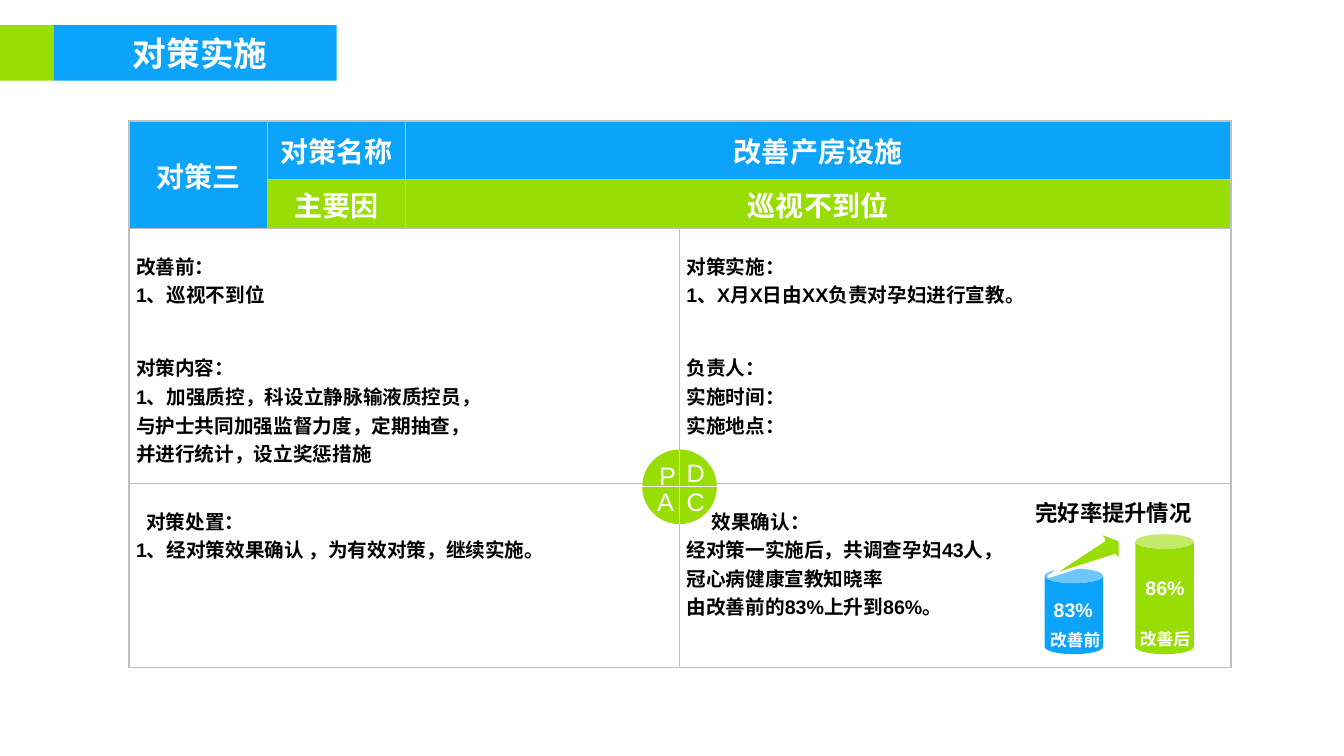
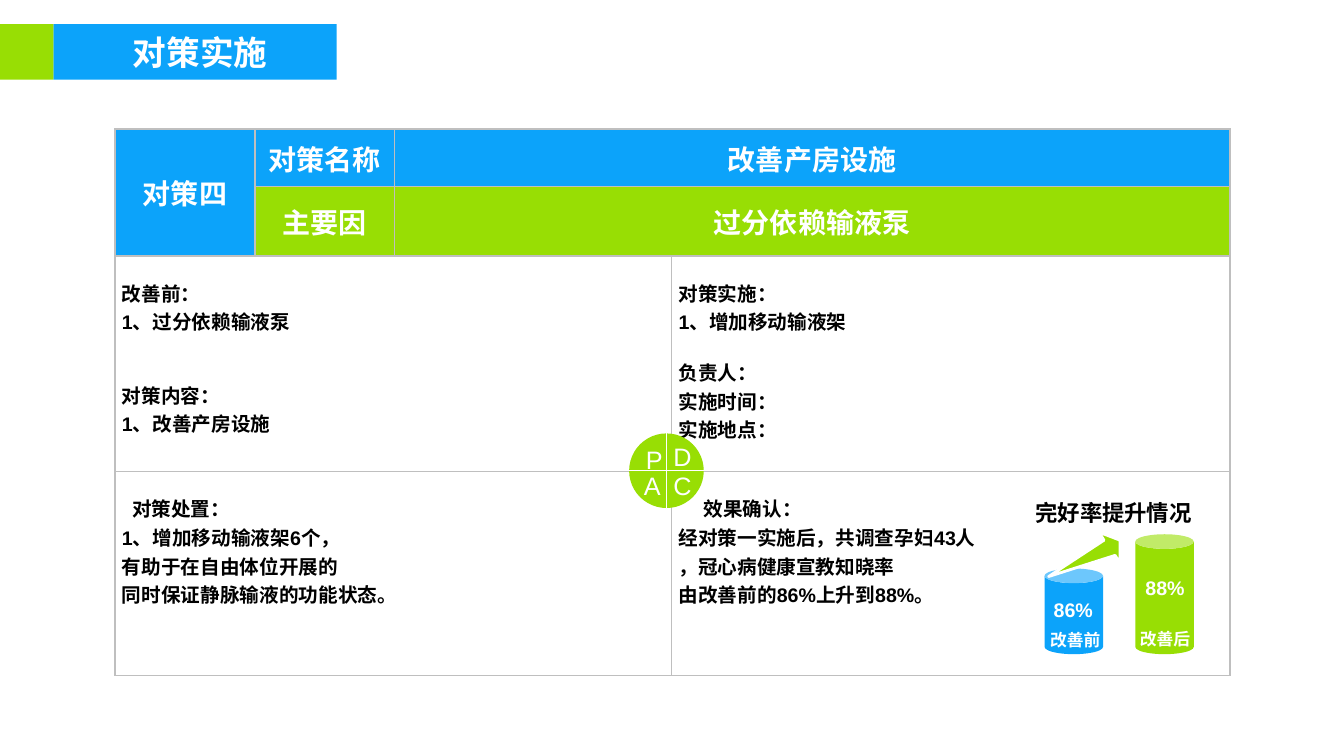
from lxml.etree import SubElement
from pptx import Presentation
from pptx.dml.color import RGBColor
from pptx.enum.shapes import MSO_CONNECTOR, MSO_SHAPE
from pptx.enum.text import MSO_ANCHOR, MSO_AUTO_SIZE, PP_ALIGN
from pptx.oxml.ns import qn
from pptx.util import Inches, Pt

BLUE = RGBColor(0x0C, 0xA3, 0xFA)
GREEN = RGBColor(0x98, 0xDE, 0x04)
GREY = RGBColor(0xBF, 0xBF, 0xBF)
WHITE = RGBColor(0xFF, 0xFF, 0xFF)
BLACK = RGBColor(0x00, 0x00, 0x00)
FONT = "Arial"
GAP = 16  # height of one skipped line, in points


class Deck:
    def __init__(self):
        self.prs = Presentation()
        self.prs.slide_width = Inches(13.33)
        self.prs.slide_height = Inches(7.5)
        self.slide = None

    def style(self, para, size, color, bold=True, align=PP_ALIGN.CENTER):
        para.alignment = align
        font = para.font
        font.name, font.size, font.bold = FONT, Pt(size), bold
        font.color.rgb = color

    def page(self, title, top):
        """Add a slide with its title band."""
        self.slide = self.prs.slides.add_slide(self.prs.slide_layouts[5])
        self.shape(MSO_SHAPE.RECTANGLE, 0, top, 0.53, 0.55, GREEN)
        band = self.slide.shapes.title
        band.left, band.top = Inches(0.53), Inches(top)
        band.width, band.height = Inches(2.81), Inches(0.55)
        band.fill.solid()
        band.fill.fore_color.rgb = BLUE
        frame = band.text_frame
        frame.text = title
        frame.auto_size = MSO_AUTO_SIZE.NONE
        frame.vertical_anchor = MSO_ANCHOR.MIDDLE
        frame.margin_left = Inches(0.1)
        frame.margin_right = frame.margin_top = frame.margin_bottom = 0
        self.style(frame.paragraphs[0], 24, WHITE)

    def shape(self, kind, x, y, w, h, color):
        shape = self.slide.shapes.add_shape(
            kind, Inches(x), Inches(y), Inches(w), Inches(h))
        shape.shadow.inherit = False
        shape.fill.solid()
        shape.fill.fore_color.rgb = color
        shape.line.fill.background()

    def label(self, text, x, y, w, h, size, color=WHITE, bold=True):
        box = self.slide.shapes.add_textbox(
            Inches(x), Inches(y), Inches(w), Inches(h))
        frame = box.text_frame
        frame.word_wrap = False
        frame.text = text
        self.style(frame.paragraphs[0], size, color, bold)

    def line(self, x1, y1, x2, y2):
        line = self.slide.shapes.add_connector(
            MSO_CONNECTOR.STRAIGHT,
            Inches(x1), Inches(y1), Inches(x2), Inches(y2))
        line.line.color.rgb = WHITE
        line.line.width = Pt(0.75)
        SubElement(line._element.spPr, qn("a:effectLst"))

    def border(self, cell):
        props = cell._tc.get_or_add_tcPr()
        for side in ("a:lnL", "a:lnR", "a:lnT", "a:lnB"):
            edge = SubElement(props, qn(side), w=str(Pt(1)))
            fill = SubElement(edge, qn("a:solidFill"))
            SubElement(fill, qn("a:srgbClr"), val=str(GREY))

    def table(self, x, y, cols, rows):
        """Add the plan grid: two header rows above four quarters."""
        grid = self.slide.shapes.add_table(
            len(rows), len(cols), Inches(x), Inches(y),
            Inches(sum(cols)), Inches(sum(rows))).table
        grid.first_row = grid.horz_banding = False
        for col, width in zip(grid.columns, cols):
            col.width = Inches(width)
        for row, height in zip(grid.rows, rows):
            row.height = Inches(height)
        for cell in grid.iter_cells():
            self.border(cell)
            cell.fill.solid()
            cell.fill.fore_color.rgb = WHITE
            cell.margin_left = cell.margin_right = Inches(0.07)
            cell.margin_top = cell.margin_bottom = 0
        for first, last in (((0, 0), (1, 0)), ((0, 2), (0, 3)),
                            ((1, 2), (1, 3)), ((2, 0), (2, 2)),
                            ((3, 0), (3, 2))):
            grid.cell(*first).merge(grid.cell(*last))
        return grid

    def head(self, cell, text, color):
        cell.text = text
        cell.fill.fore_color.rgb = color
        cell.vertical_anchor = MSO_ANCHOR.MIDDLE
        self.style(cell.text_frame.paragraphs[0], 20, WHITE)

    def body(self, cell, blocks, gap=0, indent=0):
        """Fill a cell with blocks of lines, gap skipped lines apart."""
        cell.margin_top = Pt(GAP)
        cell.text = "\n".join(line for block in blocks for line in block)
        paras = cell.text_frame.paragraphs
        for para in paras:
            self.style(para, 14, BLACK, align=PP_ALIGN.LEFT)
        start = 0
        for block in blocks[:-1]:
            start += len(block)
            paras[start].space_before = Pt(GAP * gap)
        if indent:
            props = paras[0]._p.get_or_add_pPr()
            props.set("marL", str(Inches(indent)))
            props.set("indent", "0")

    def rates(self, before, after):
        """Draw the two cans and the rising arrow."""
        self.shape(MSO_SHAPE.CAN, 10.36, 5.64, 0.58, 0.85, BLUE)
        self.shape(MSO_SHAPE.CAN, 11.26, 5.3, 0.58, 1.19, GREEN)
        self.label("完好率提升情况", 10.16, 4.9, 1.77, 0.37, 16, BLACK)
        self.label(before, 10.35, 5.88, 0.59, 0.34, 14)
        self.label(after, 11.26, 5.66, 0.59, 0.34, 14)
        self.label("改善前", 10.31, 6.2, 0.71, 0.3, 12)
        self.label("改善后", 11.2, 6.19, 0.71, 0.3, 12)
        points = [(10.9, 5.28), (11.11, 5.36), (11.11, 5.59),
                  (11.06, 5.51), (10.4, 5.72), (10.95, 5.36)]
        points = [(Inches(x), Inches(y)) for x, y in points]
        path = self.slide.shapes.build_freeform(*points[0])
        path.add_line_segments(points[1:], close=True)
        arrow = path.convert_to_shape()
        arrow.shadow.inherit = False
        arrow.fill.solid()
        arrow.fill.fore_color.rgb = GREEN
        arrow.line.color.rgb = WHITE
        arrow.line.width = Pt(2)

    def dial(self, x, y):
        """Draw the PDCA circle."""
        size, half = 0.74, 0.37
        self.shape(MSO_SHAPE.OVAL, x, y, size, size, GREEN)
        self.line(x, y + half, x + size, y + half)
        self.line(x + half, y, x + half, y + size)
        for text, dx, dy in (("P", 0.06, 0.06), ("D", 0.34, 0.03),
                             ("C", 0.34, 0.32), ("A", 0.04, 0.32)):
            self.label(text, x + dx, y + dy, 0.38, 0.4, 18, bold=False)

    def plan(self, top, grid, name, cause, quads, gap, rates, dial):
        """Build one whole slide."""
        self.page("对策实施", top)
        table = self.table(*grid)
        for row, col, text, color in ((0, 0, name, BLUE),
                                      (0, 1, "对策名称", BLUE),
                                      (0, 2, "改善产房设施", BLUE),
                                      (1, 1, "主要因", GREEN),
                                      (1, 2, cause, GREEN)):
            self.head(table.cell(row, col), text, color)
        old, work, act, check = quads
        staff = ["负责人：", "实施时间：", "实施地点："]
        self.body(table.cell(2, 0), old, 2)
        self.body(table.cell(2, 3), [["对策实施：", work], staff], gap)
        self.body(table.cell(3, 0), [["对策处置："] + act], indent=0.1)
        self.body(table.cell(3, 3), [["效果确认："] + check], indent=0.25)
        self.rates(*rates)
        self.dial(*dial)


def main():
    deck = Deck()

    # Third measure
    deck.plan(
        0.25,
        (1.28, 1.2, [1.37, 1.37, 2.72, 5.47], [0.58, 0.49, 2.53, 1.82]),
        "对策三", "巡视不到位",
        ([["改善前：", "1、巡视不到位"],
          ["对策内容：", "1、加强质控，科设立静脉输液质控员，",
           "与护士共同加强监督力度，定期抽查，", "并进行统计，设立奖惩措施"]],
         "1、X月X日由XX负责对孕妇进行宣教。",
         ["1、经对策效果确认 ，为有效对策，继续实施。"],
         ["经对策一实施后，共调查孕妇43人，", "冠心病健康宣教知晓率",
          "由改善前的83%上升到86%。"]),
        2, ("83%", "86%"), (6.37, 4.46))

    # Fourth measure
    deck.plan(
        0.24,
        (1.14, 1.28, [1.39, 1.38, 2.75, 5.54], [0.57, 0.69, 2.14, 2.02]),
        "对策四", "过分依赖输液泵",
        ([["改善前：", "1、过分依赖输液泵"],
          ["对策内容：", "1、改善产房设施"]],
         "1、增加移动输液架",
         ["1、增加移动输液架6个，", "有助于在自由体位开展的",
          "同时保证静脉输液的功能状态。"],
         ["经对策一实施后，共调查孕妇43人", "，冠心病健康宣教知晓率",
          "由改善前的86%上升到88%。"]),
        1, ("86%", "88%"), (6.24, 4.3))

    deck.prs.save("out.pptx")


if __name__ == "__main__":
    main()
